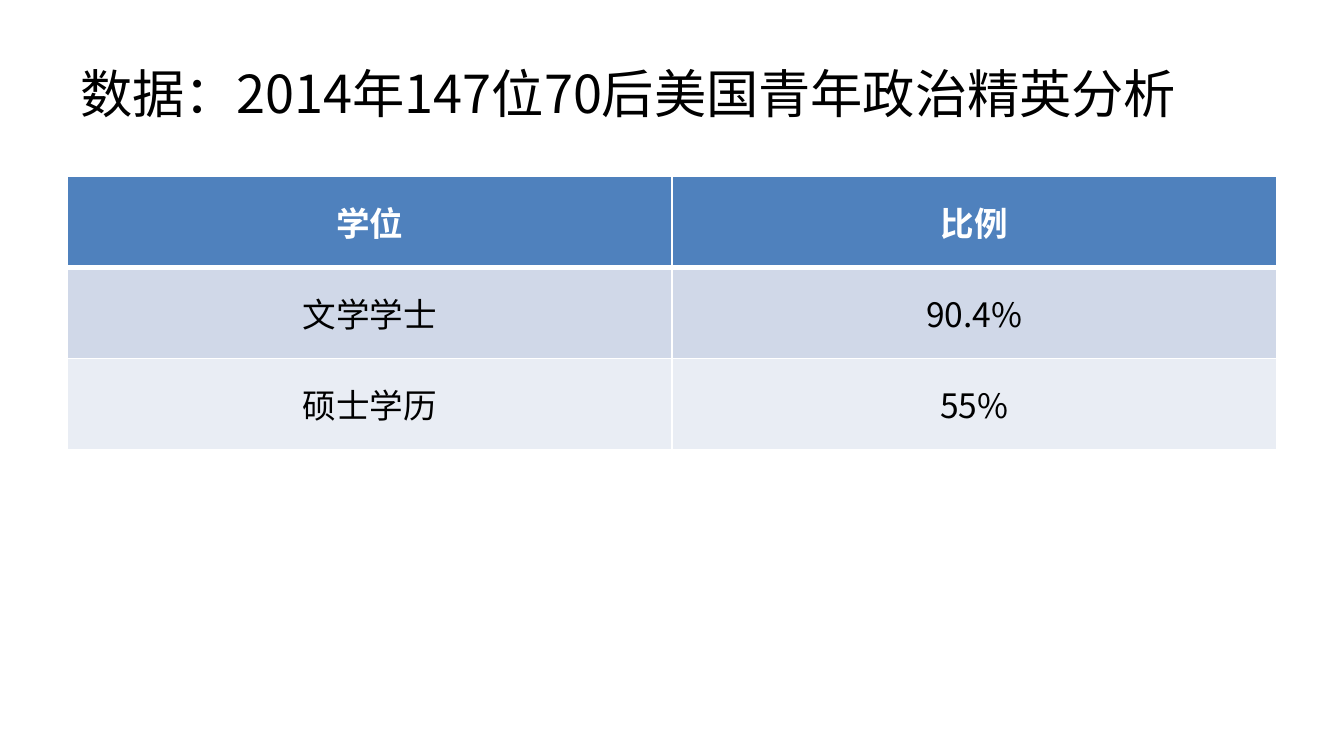
from lxml import etree
from pptx import Presentation
from pptx.dml.color import RGBColor
from pptx.enum.text import MSO_ANCHOR, PP_ALIGN
from pptx.oxml.ns import qn
from pptx.util import Inches, Pt

LEFT = PP_ALIGN.LEFT
CENTER = PP_ALIGN.CENTER
MIDDLE = MSO_ANCHOR.MIDDLE

BLACK = RGBColor(0x00, 0x00, 0x00)
WHITE = RGBColor(0xFF, 0xFF, 0xFF)
HEADER_BLUE = RGBColor(0x4F, 0x81, 0xBD)
BANDS = (RGBColor(0xD0, 0xD8, 0xE8), RGBColor(0xE9, 0xED, 0xF4))

FONT = "Noto Sans CJK SC"
GRID_COLUMNS = 20
GRID_ROWS = 24

TITLE = "数据：2014年147位70后美国青年政治精英分析"
DEGREES = (("学位", "比例"), ("文学学士", "90.4%"), ("硕士学历", "55%"))


def write(frame, text, size=18, color=BLACK, bold=False, align=LEFT):
    para = frame.paragraphs[0]
    para.alignment = align
    span = para.add_run()
    span.text = text
    span.font.size = Pt(size)
    span.font.bold = bold
    span.font.color.rgb = color
    span.font.name = FONT
    etree.SubElement(span.font._element, qn("a:ea"), typeface=FONT)


def add_border(cell, side, width):
    properties = cell._tc.get_or_add_tcPr()
    line = etree.SubElement(properties, qn(f"a:ln{side}"), w=str(Pt(width)))
    fill = etree.SubElement(line, qn("a:solidFill"))
    etree.SubElement(fill, qn("a:srgbClr"), val=str(WHITE))


class SlideBuilder:
    def __init__(self, deck):
        self.column = deck.slide_width / GRID_COLUMNS
        self.row = deck.slide_height / GRID_ROWS
        self.page = deck.slides.add_slide(deck.slide_layouts[6])

    def place(self, left, top, width, height):
        return (
            round(left * self.column),
            round(top * self.row),
            round(width * self.column),
            round(height * self.row),
        )

    def title(self, text, *area):
        box = self.page.shapes.add_textbox(*self.place(*area))
        frame = box.text_frame
        frame.word_wrap = True
        frame.vertical_anchor = MIDDLE
        write(frame, text, size=28)

    def table(self, records, *area):
        size = len(records), len(records[0])
        table = self.page.shapes.add_table(*size, *self.place(*area)).table
        for row, record in enumerate(records):
            for column, text in enumerate(record):
                self.cell(table.cell(row, column), text, row)

    def cell(self, cell, text, row):
        header = row == 0
        widths = {"L": 1, "R": 1, "T": 3 if row == 1 else 1, "B": 3 if header else 1}
        for side, width in widths.items():
            add_border(cell, side, width)
        cell.fill.solid()
        cell.fill.fore_color.rgb = HEADER_BLUE if header else BANDS[(row - 1) % 2]
        cell.vertical_anchor = MIDDLE
        cell.margin_left = cell.margin_right = Inches(0.1)
        cell.margin_top = cell.margin_bottom = Inches(0.04)
        color = WHITE if header else BLACK
        write(cell.text_frame, text, color=color, bold=header, align=CENTER)


def main():
    deck = Presentation()
    deck.slide_width = Inches(10)
    deck.slide_height = deck.slide_width * 9 // 16
    builder = SlideBuilder(deck)
    builder.title(TITLE, 1, 0.95, 18, 4)
    builder.table(DEGREES, 1, 5.6, 18, 8.67)
    deck.save("out.pptx")


if __name__ == "__main__":
    main()
